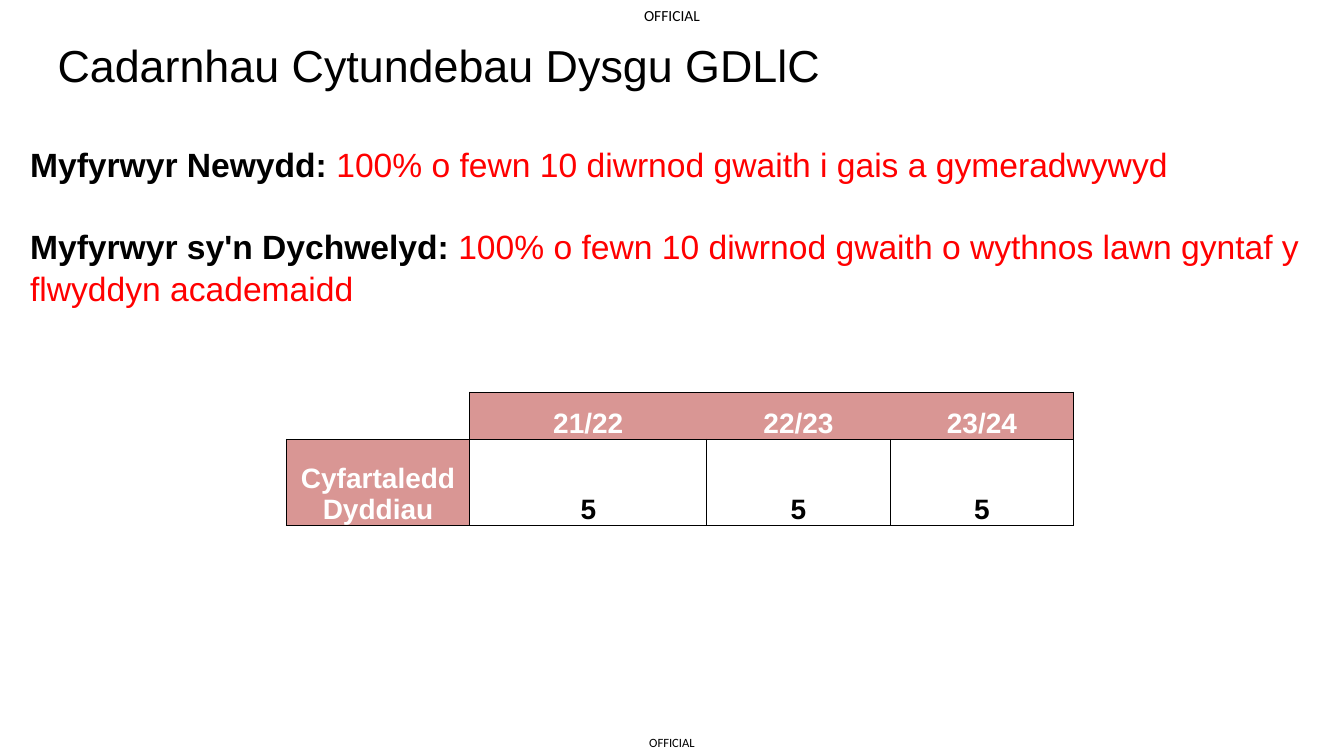
from lxml.etree import SubElement
from pptx import Presentation
from pptx.dml.color import RGBColor
from pptx.enum.text import MSO_ANCHOR, PP_ALIGN
from pptx.oxml.ns import qn
from pptx.util import Inches, Pt

BLACK, WHITE, RED, ROSE = "000000", "FFFFFF", "FF0000", "D99694"
LABEL = {"name": "Calibri", "color": BLACK}
TITLE = {"name": "Arial", "size": Pt(32), "color": BLACK}
LEAD = {"name": "Arial", "size": Pt(24), "bold": True, "color": BLACK}
TARGET = {"name": "Arial", "size": Pt(24), "bold": False, "color": RED}
HEADING = {"name": "Arial", "size": Pt(20), "bold": True, "color": WHITE}
VALUE = HEADING | {"color": BLACK}

MARKINGS = [
    ((6.3, 7.23, 0.73, 0.27), 9),
    ((6.23, 0, 0.87, 0.31), 11),
]
TARGETS = [
    ("Myfyrwyr Newydd: ", "100% o fewn 10 diwrnod gwaith i gais a gymeradwywyd"),
    ("Myfyrwyr sy'n Dychwelyd: ",
     "100% o fewn 10 diwrnod gwaith o wythnos lawn gyntaf y flwyddyn academaidd"),
]
ROWS = [
    ["", "21/22", "22/23", "23/24"],
    ["Cyfartaledd Dyddiau", "5", "5", "5"],
]
COLUMN_WIDTHS = [1.82, 2.35, 1.82, 1.82]
ROW_HEIGHTS = [0.47, 0.85]
BORDERS = [
    [{"R": 1, "B": 1}, {"L": 1, "T": 1, "B": 1}, {"T": 1, "B": 1}, {"T": 1, "R": 1, "B": 1}],
    [{"L": 1, "R": 1, "T": 1, "B": 1}, {"L": 1, "R": 0.5, "T": 1, "B": 1},
     {"L": 0.5, "R": 0.5, "T": 1, "B": 1}, {"L": 0.5, "R": 1, "T": 1, "B": 1}],
]


def color(code):
    return RGBColor.from_string(code)


def add_span(para, text, style):
    span = para.add_run()
    span.text = text
    for key, value in style.items():
        if key == "color":
            span.font.color.rgb = color(value)
        else:
            setattr(span.font, key, value)


def add_box(page, place, margins, anchor=MSO_ANCHOR.TOP, wrap=True):
    frame = page.shapes.add_textbox(*map(Inches, place)).text_frame
    frame.word_wrap = wrap
    frame.vertical_anchor = anchor
    set_margins(frame, margins)
    return frame


def set_margins(target, margins):
    for side, size in zip(("left", "top", "right", "bottom"), margins):
        setattr(target, f"margin_{side}", Inches(size))


def set_borders(cell, widths):
    properties = cell._tc.get_or_add_tcPr()
    for index, side in enumerate("LRTB"):
        line = SubElement(properties, qn(f"a:ln{side}"))
        properties.insert(index, line)
        if side in widths:
            line.set("w", str(Pt(widths[side])))
            fill = SubElement(line, qn("a:solidFill"))
            SubElement(fill, qn("a:srgbClr")).set("val", BLACK)
        else:
            SubElement(line, qn("a:noFill"))


def add_markings(page):
    for place, size in MARKINGS:
        frame = add_box(page, place, (0, 0, 0, 0), MSO_ANCHOR.MIDDLE, False)
        para = frame.paragraphs[0]
        para.alignment = PP_ALIGN.CENTER
        add_span(para, "OFFICIAL", LABEL | {"size": Pt(size)})


def add_title(page):
    para = add_box(page, (-1.25, 0.28, 11.21, 0.64), (0.1, 0.09, 0.1, 0.05)).paragraphs[0]
    para.alignment = PP_ALIGN.CENTER
    add_span(para, "Cadarnhau Cytundebau Dysgu GDLlC", TITLE)


def add_targets(page):
    frame = add_box(page, (0.2, 1.34, 12.81, 2.41), (0.1, 0.07, 0.1, 0.05))
    for index, (lead, target) in enumerate(TARGETS):
        para = frame.add_paragraph() if index else frame.paragraphs[0]
        para.line_spacing = 1.05
        para.space_before = Pt(28 if index else 0)
        add_span(para, lead, LEAD)
        add_span(para, target, TARGET)


def add_days_table(page):
    place = (2.84, 3.89, sum(COLUMN_WIDTHS), sum(ROW_HEIGHTS))
    table = page.shapes.add_table(len(ROWS), len(ROWS[0]), *map(Inches, place)).table
    table.first_row = table.horz_banding = False
    for column, width in zip(table.columns, COLUMN_WIDTHS):
        column.width = Inches(width)
    for row, height in zip(table.rows, ROW_HEIGHTS):
        row.height = Inches(height)
    for r, texts in enumerate(ROWS):
        for c, text in enumerate(texts):
            cell = table.cell(r, c)
            is_heading = (r == 0) != (c == 0)
            if is_heading:
                cell.fill.solid()
                cell.fill.fore_color.rgb = color(ROSE)
            else:
                cell.fill.background()
            set_borders(cell, BORDERS[r][c])
            set_margins(cell, (0.01, 0.01, 0.01, 0))
            cell.vertical_anchor = MSO_ANCHOR.BOTTOM
            if text:
                para = cell.text_frame.paragraphs[0]
                para.alignment = PP_ALIGN.CENTER
                add_span(para, text, HEADING if is_heading else VALUE)


def main():
    deck = Presentation()
    deck.slide_width, deck.slide_height = Inches(13.33), Inches(7.5)
    page = deck.slides.add_slide(deck.slide_layouts[6])
    add_markings(page)
    add_title(page)
    add_targets(page)
    add_days_table(page)
    deck.save("out.pptx")


if __name__ == "__main__":
    main()
